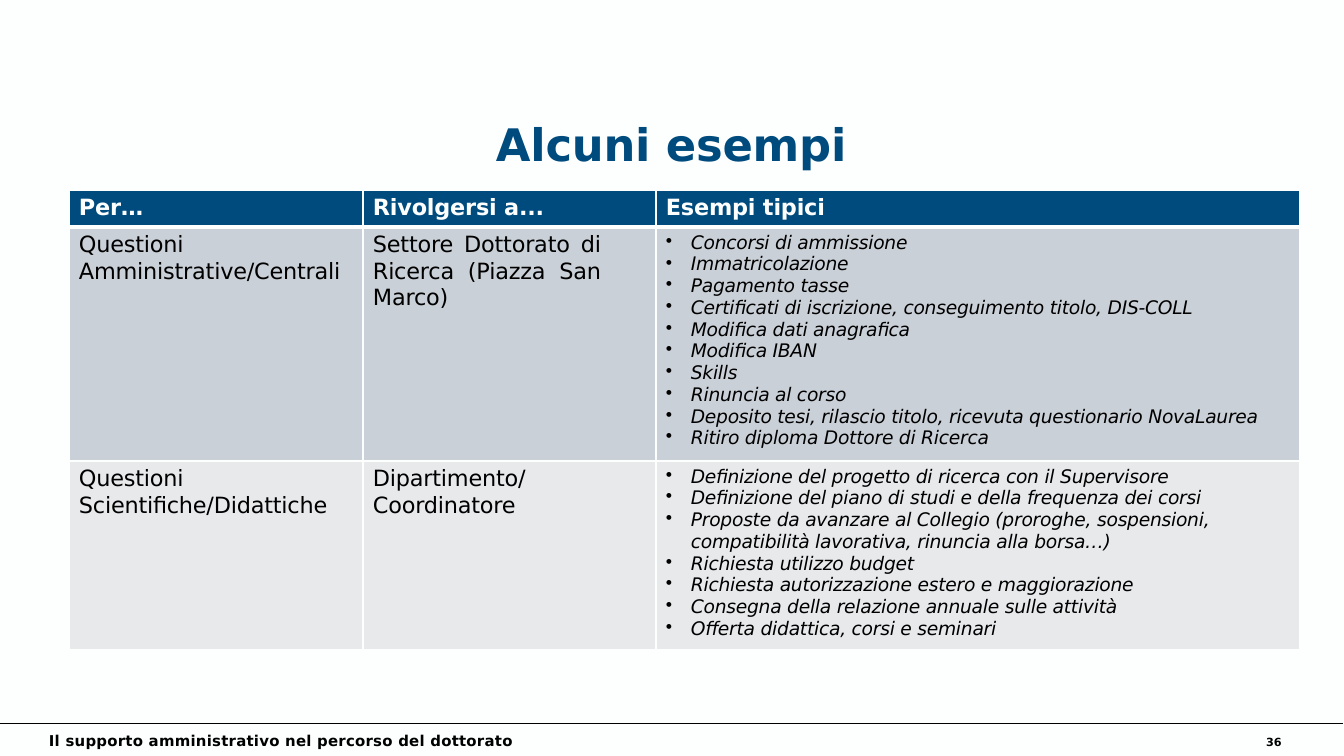
from lxml import etree
from pptx import Presentation
from pptx import util as u
from pptx.dml.color import RGBColor
from pptx.enum import shapes, text
from pptx.oxml.ns import qn

PX = 914400 / 134.4
FONT = "DejaVu Sans"
HUES = {"paper": "FDFFFF", "navy": "004B7D", "ink": "000000", "steel": "CAD0D7", "mist": "E7E9EB"}


def px(n):
    return u.Emu(round(n * PX))


def write(para, words, size, hue, bold=False, italic=False, gap=-10):
    for i, part in enumerate(words.split("\n")):
        if i:
            para.add_line_break()
        run = para.add_run()
        run.text = part
        font = run.font
        font.name, font.size, font.bold, font.italic = FONT, u.Pt(size), bold, italic
        font.color.rgb = RGBColor.from_string(HUES[hue])
        run._r.get_or_add_rPr().set("spc", str(gap))


deck = Presentation()
deck.slide_width, deck.slide_height = px(1344), px(756)
slide = deck.slides.add_slide(deck.slide_layouts[6])
back = slide.background.fill
back.solid()
back.fore_color.rgb = RGBColor.from_string(HUES["paper"])

rule = slide.shapes.add_connector(shapes.MSO_CONNECTOR.STRAIGHT, px(0), px(724), px(1343), px(724))
rule.line.color.rgb = RGBColor.from_string(HUES["ink"])
rule.line.width = u.Pt(0.5)
etree.SubElement(rule._element.spPr, qn("a:effectLst"))

labels = [
    ("Alcuni esempi", 496, 113, 354, 58, 24, "navy", -10),
    ("Il supporto amministrativo nel percorso del dottorato", 49, 728, 468, 23, 8, "ink", 10),
    ("36", 1266, 731, 28, 18, 6, "ink", 10),
]
for words, x, y, w, h, size, hue, gap in labels:
    frame = slide.shapes.add_textbox(px(x), px(y), px(w), px(h)).text_frame
    frame.word_wrap = True
    frame.margin_left = frame.margin_right = frame.margin_bottom = 0
    frame.margin_top = px(4)
    write(frame.paragraphs[0], words, size, hue, bold=True, gap=gap)

cols = [294, 293, 644]
rows = [37, 234, 189]
fills = ["navy", "steel", "mist"]
cells = [
    ["Per…", "Rivolgersi a...", ["Esempi tipici"]],
    ["Questioni\nAmministrative/Centrali", "Settore Dottorato di Ricerca (Piazza San Marco)", [
        "Concorsi di ammissione",
        "Immatricolazione",
        "Pagamento tasse",
        "Certificati di iscrizione, conseguimento titolo, DIS-COLL",
        "Modifica dati anagrafica",
        "Modifica IBAN",
        "Skills",
        "Rinuncia al corso",
        "Deposito tesi, rilascio titolo, ricevuta questionario NovaLaurea",
        "Ritiro diploma Dottore di Ricerca",
    ]],
    ["Questioni\nScientifiche/Didattiche", "Dipartimento/\nCoordinatore", [
        "Definizione del progetto di ricerca con il Supervisore",
        "Definizione del piano di studi e della frequenza dei corsi",
        "Proposte da avanzare al Collegio (proroghe, sospensioni, "
        "compatibilità lavorativa, rinuncia alla borsa…)",
        "Richiesta utilizzo budget",
        "Richiesta autorizzazione estero e maggiorazione",
        "Consegna della relazione annuale sulle attività",
        "Offerta didattica, corsi e seminari",
    ]],
]

table = slide.shapes.add_table(3, 3, px(69), px(190), px(sum(cols)), px(sum(rows))).table
table.horz_banding = False
for c, w in enumerate(cols):
    table.columns[c].width = px(w)

for r, h in enumerate(rows):
    table.rows[r].height = px(h)
    for c, entry in enumerate(cells[r]):
        cell = table.cell(r, c)
        listed = r > 0 and c == 2
        cell.margin_left = px(10)
        cell.margin_top = px(5)
        cell.margin_right = px(55 if r == 1 and c == 1 else 0)
        cell.margin_bottom = 0

        props = cell._tc.get_or_add_tcPr()
        for side in "LRTB":
            thick = (r, side) in [(0, "B"), (1, "T")]
            edge = etree.SubElement(props, qn(f"a:ln{side}"), w=str(u.Pt(3 if thick else 1)))
            paint = etree.SubElement(edge, qn("a:solidFill"))
            etree.SubElement(paint, qn("a:srgbClr"), val=HUES["paper"])
        cell.fill.solid()
        cell.fill.fore_color.rgb = RGBColor.from_string(HUES[fills[r]])

        frame = cell.text_frame
        for i, words in enumerate(entry if c == 2 else [entry]):
            para = frame.add_paragraph() if i else frame.paragraphs[0]
            if listed:
                ppr = para._p.get_or_add_pPr()
                ppr.set("marL", str(px(25)))
                ppr.set("indent", str(px(-25)))
                etree.SubElement(ppr, qn("a:buChar"), char="•")
            elif r == 1 and c == 1:
                para.alignment = text.PP_ALIGN.JUSTIFY
            write(para, words, 10 if listed else 12, "ink" if r else "paper", bold=r == 0, italic=listed)

deck.save("out.pptx")
